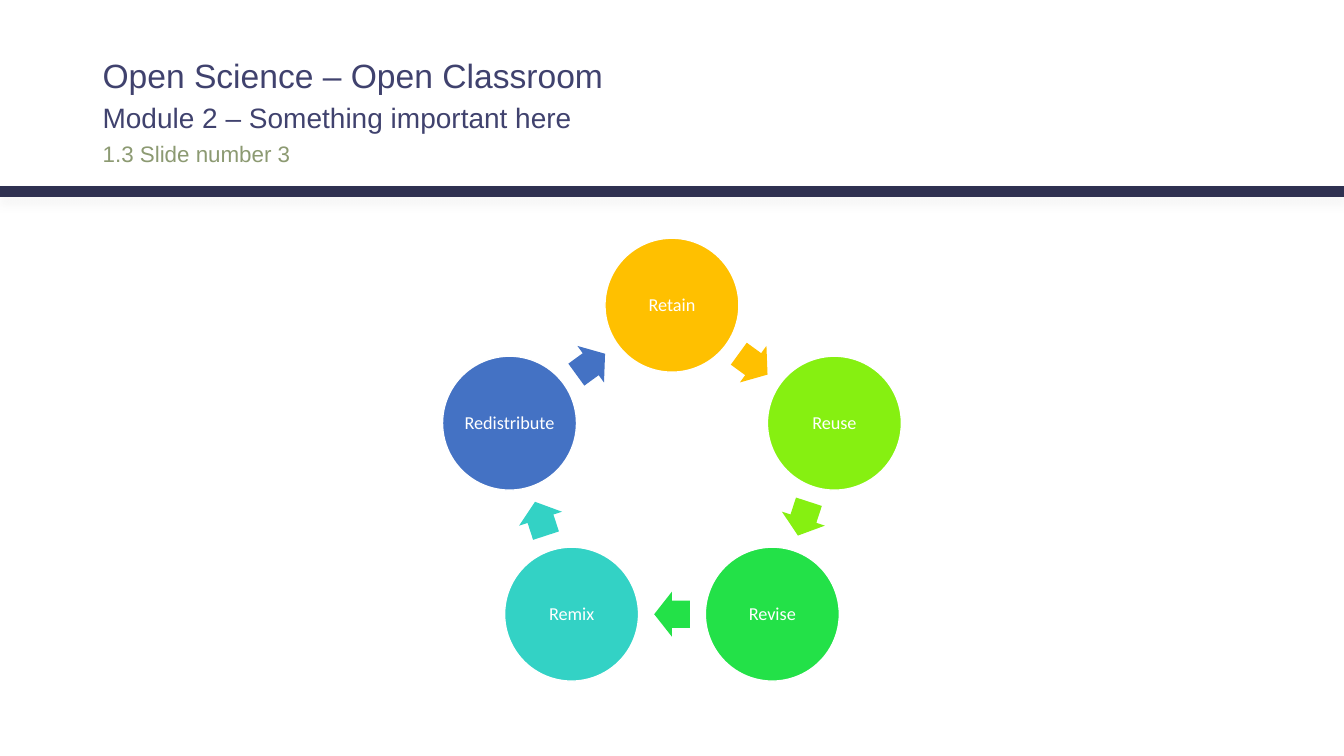
from dataclasses import dataclass
from math import cos, pi, radians, sin

from lxml.etree import SubElement
from pptx import Presentation
from pptx.dml.color import RGBColor
from pptx.enum.shapes import MSO_CONNECTOR, MSO_SHAPE
from pptx.enum.text import MSO_ANCHOR as Anchor, PP_ALIGN as Align
from pptx.oxml.ns import qn
from pptx.shapes.autoshape import Shape
from pptx.slide import Slide
from pptx.util import Pt

WHITE = RGBColor(0xFF, 0xFF, 0xFF)
NAVY = RGBColor(0x2F, 0x31, 0x51)
INDIGO = RGBColor(0x40, 0x42, 0x6E)
SAGE = RGBColor(0x8C, 0x9A, 0x72)
AMBER = RGBColor(0xFF, 0xC0, 0x00)
LIME = RGBColor(0x86, 0xF0, 0x11)
GREEN = RGBColor(0x23, 0xE1, 0x48)
TURQUOISE = RGBColor(0x33, 0xD2, 0xC5)
BLUE = RGBColor(0x44, 0x72, 0xC4)

SLIDE_WIDTH, SLIDE_HEIGHT = 960, 540
HEADING_LEFT, HEADING_WIDTH = 66.2, 828
RULE_Y = 137
CENTER_X, CENTER_Y = 480, 340
RING_RADIUS = 122
CIRCLE_SIZE = 95.7
ARROW_WIDTH, ARROW_HEIGHT = 25.4, 32.3


@dataclass(frozen=True)
class Heading:
    text: str
    top: float
    height: float
    size: float
    color: RGBColor
    anchor: Anchor
    inset_top: float


@dataclass(frozen=True)
class Step:
    name: str
    color: RGBColor


TITLE = Heading("1.3 Slide number 3", 94.3, 31, 16, SAGE, Anchor.MIDDLE, 3.6)
HEADINGS = [
    Heading("Module 2 – Something important here", 67, 24.5, 20, INDIGO, Anchor.TOP, 5),
    Heading("Open Science – Open Classroom", 32.4, 33.8, 24, INDIGO, Anchor.TOP, 6.5),
]
STEPS = [
    Step("Retain", AMBER),
    Step("Reuse", LIME),
    Step("Revise", GREEN),
    Step("Remix", TURQUOISE),
    Step("Redistribute", BLUE),
]


def write_line(shape: Shape, text: str, font_name: str, size: float,
               color: RGBColor, alignment: Align) -> None:
    paragraph = shape.text_frame.paragraphs[0]
    paragraph.alignment = alignment
    run = paragraph.add_run()
    run.text = text
    run.font.name = font_name
    run.font.size = Pt(size)
    run.font.color.rgb = color


def format_heading(shape: Shape, heading: Heading) -> None:
    shape.left, shape.top = Pt(HEADING_LEFT), Pt(heading.top)
    shape.width, shape.height = Pt(HEADING_WIDTH), Pt(heading.height)
    frame = shape.text_frame
    frame.word_wrap = True
    frame.vertical_anchor = heading.anchor
    frame.margin_top = Pt(heading.inset_top)
    write_line(shape, heading.text, "Arial", heading.size, heading.color, Align.LEFT)


def add_rule(slide: Slide) -> None:
    rule = slide.shapes.add_connector(
        MSO_CONNECTOR.STRAIGHT, 0, Pt(RULE_Y), Pt(SLIDE_WIDTH), Pt(RULE_Y))
    rule.line.color.rgb = NAVY
    rule.line.width = Pt(7.75)
    effects = SubElement(rule.element.spPr, qn("a:effectLst"))
    shadow = SubElement(effects, qn("a:outerShdw"), blurRad=str(Pt(6)),
                        dist=str(Pt(5)), dir="5400000", rotWithShape="0")
    color = SubElement(shadow, qn("a:srgbClr"), val="EAEAEA")
    SubElement(color, qn("a:alpha"), val="40000")


def add_ring_shape(slide: Slide, kind: MSO_SHAPE, angle: float, radius: float,
                   width: float, height: float, fill: RGBColor) -> Shape:
    x = CENTER_X + radius * sin(radians(angle))
    y = CENTER_Y - radius * cos(radians(angle))
    shape = slide.shapes.add_shape(
        kind, Pt(x - width / 2), Pt(y - height / 2), Pt(width), Pt(height))
    shape.shadow.inherit = False
    shape.fill.solid()
    shape.fill.fore_color.rgb = fill
    return shape


def add_circle(slide: Slide, step: Step, angle: float) -> None:
    circle = add_ring_shape(slide, MSO_SHAPE.OVAL, angle, RING_RADIUS,
                            CIRCLE_SIZE, CIRCLE_SIZE, step.color)
    circle.line.color.rgb = WHITE
    circle.line.width = Pt(1)
    frame = circle.text_frame
    frame.word_wrap = False
    frame.vertical_anchor = Anchor.MIDDLE
    frame.margin_left = frame.margin_right = Pt(1.3)
    frame.margin_top = frame.margin_bottom = Pt(1.3)
    write_line(circle, step.name, "Calibri", 13, WHITE, Align.CENTER)
    frame.paragraphs[0].line_spacing = 0.9


def add_arrow(slide: Slide, step: Step, angle: float) -> None:
    chord_radius = RING_RADIUS * cos(pi / len(STEPS))
    arrow = add_ring_shape(slide, MSO_SHAPE.RIGHT_ARROW, angle, chord_radius,
                           ARROW_WIDTH, ARROW_HEIGHT, step.color)
    arrow.line.fill.background()
    arrow.adjustments[0] = 0.6
    arrow.adjustments[1] = 0.5
    arrow.rotation = angle


def main() -> None:
    presentation = Presentation()
    presentation.slide_width = Pt(SLIDE_WIDTH)
    presentation.slide_height = Pt(SLIDE_HEIGHT)
    slide = presentation.slides.add_slide(presentation.slide_layouts[5])
    add_rule(slide)
    turn = 360 / len(STEPS)
    for index, step in enumerate(STEPS):
        add_circle(slide, step, index * turn)
        add_arrow(slide, step, (index + 0.5) * turn)
    format_heading(slide.shapes.title, TITLE)
    for heading in HEADINGS:
        format_heading(slide.shapes.add_textbox(0, 0, 0, 0), heading)
    presentation.save("out.pptx")


if __name__ == "__main__":
    main()
